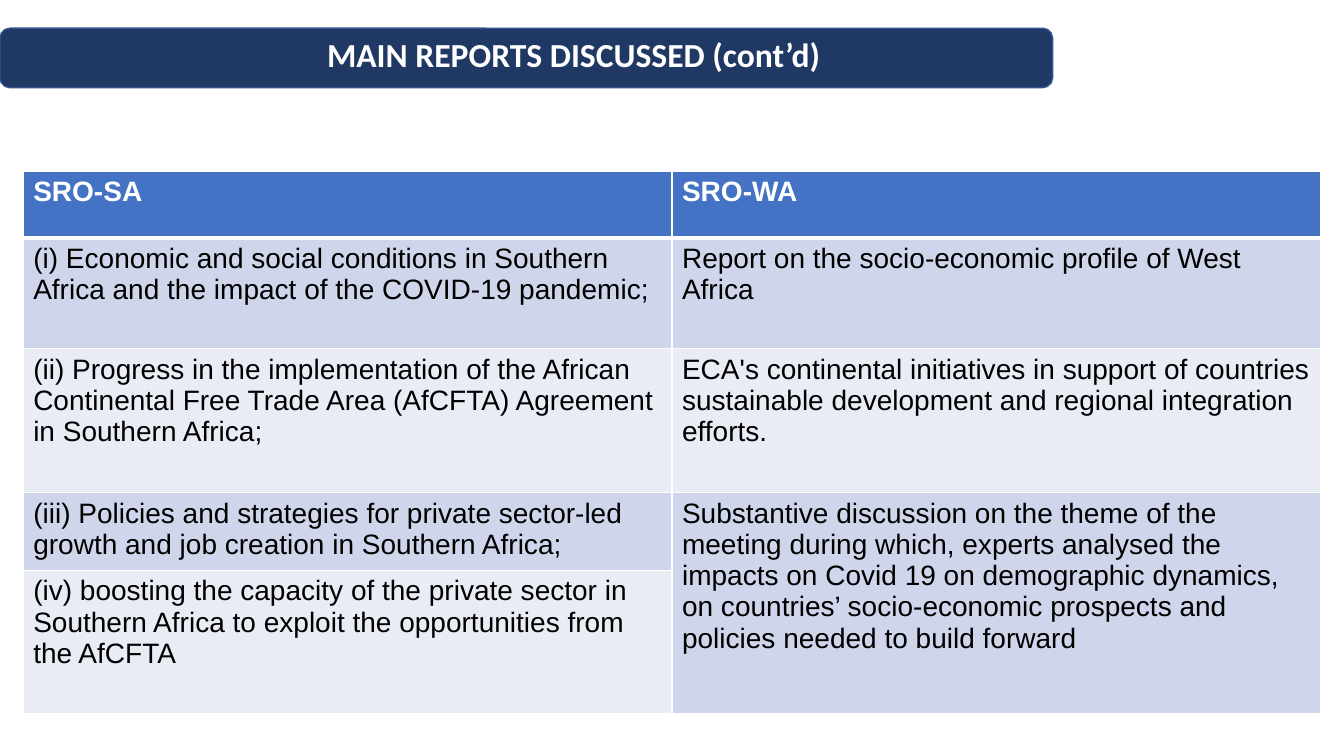
from pptx import Presentation
from pptx.dml.color import RGBColor
from pptx.enum.shapes import MSO_SHAPE
from pptx.enum.text import MSO_ANCHOR, PP_ALIGN
from pptx.oxml.ns import qn
from pptx.util import Inches, Pt
from lxml import etree

ROUNDED = MSO_SHAPE.ROUNDED_RECTANGLE
TOP = MSO_ANCHOR.TOP
LEFT, CENTER = PP_ALIGN.LEFT, PP_ALIGN.CENTER

WHITE = RGBColor(0xFF, 0xFF, 0xFF)
BLACK = RGBColor(0, 0, 0)
NAVY = RGBColor(0x20, 0x38, 0x64)
NAVY_EDGE = RGBColor(0x32, 0x54, 0x91)
HEADER_BLUE = RGBColor(0x44, 0x72, 0xC4)
BAND_DARK = RGBColor(0xCF, 0xD5, 0xEA)
BAND_LIGHT = RGBColor(0xE9, 0xEB, 0xF5)

COLUMN_WIDTH = 6.435
ROW_HEIGHTS = [0.66, 1.1, 1.43, 0.77, 1.42]
REPORTS = [
    ("SRO-SA", "SRO-WA"),
    ("(i) Economic and social conditions in Southern Africa and the impact of "
     "the COVID-19 pandemic;",
     "Report on the socio-economic profile of West Africa"),
    ("(ii) Progress in the implementation of the African Continental Free Trade "
     "Area (AfCFTA) Agreement in Southern Africa;",
     "ECA's continental initiatives in support of countries sustainable "
     "development and regional integration efforts."),
    ("(iii) Policies and strategies for private sector-led growth and job "
     "creation in Southern Africa;",
     "Substantive discussion on the theme of the meeting during which, experts "
     "analysed the impacts on Covid 19 on demographic dynamics, on countries’ "
     "socio-economic prospects and policies needed to build forward"),
    ("(iv) boosting the capacity of the private sector in Southern Africa to "
     "exploit the opportunities from the AfCFTA", None),
]


def write_text(frame, text, size=20, font="Arial", color=BLACK, bold=False,
               align=LEFT, indent=0):
    frame.word_wrap = True
    paragraph = frame.paragraphs[0]
    paragraph.alignment = align
    if indent:
        paragraph._p.get_or_add_pPr().set("marL", str(Inches(indent)))
    run = paragraph.add_run()
    run.text = text
    run.font.size = Pt(size)
    run.font.name = font
    run.font.bold = bold
    run.font.color.rgb = color


def add_title(slide, text):
    banner = slide.shapes.add_shape(
        ROUNDED, Inches(0), Inches(0.28), Inches(10.44), Inches(0.59))
    banner.shadow.inherit = False
    banner.fill.solid()
    banner.fill.fore_color.rgb = NAVY
    banner.line.color.rgb = NAVY_EDGE
    banner.line.width = Pt(1)
    title = slide.shapes.add_textbox(
        Inches(0.96), Inches(0.29), Inches(9.07), Inches(0.5))
    write_text(title.text_frame, text, size=24, font="Calibri", color=WHITE,
               bold=True, align=CENTER, indent=0.39)


def set_borders(cell, bottom=1):
    """White cell edges; call before the fill so the XML order holds."""
    properties = cell._tc.get_or_add_tcPr()
    for side, width in (("L", 1), ("R", 1), ("T", 1), ("B", bottom)):
        edge = etree.SubElement(properties, qn(f"a:ln{side}"), w=str(Pt(width)))
        paint = etree.SubElement(edge, qn("a:solidFill"))
        etree.SubElement(paint, qn("a:srgbClr"), val=str(WHITE))


def add_reports_table(slide):
    table = slide.shapes.add_table(
        len(REPORTS), 2, Inches(0.23), Inches(1.7),
        Inches(2 * COLUMN_WIDTH), Inches(sum(ROW_HEIGHTS))).table
    for column in table.columns:
        column.width = Inches(COLUMN_WIDTH)
    for row, height in zip(table.rows, ROW_HEIGHTS):
        row.height = Inches(height)

    # The last West Africa entry covers two rows
    table.cell(3, 1).merge(table.cell(4, 1))
    for r, entries in enumerate(REPORTS):
        header = r == 0
        band = HEADER_BLUE if header else (BAND_DARK if r % 2 else BAND_LIGHT)
        for c, entry in enumerate(entries):
            cell = table.cell(r, c)
            set_borders(cell, bottom=3 if header else 1)
            cell.fill.solid()
            cell.fill.fore_color.rgb = band
            cell.vertical_anchor = TOP
            if entry:
                write_text(cell.text_frame, entry, bold=header,
                           color=WHITE if header else BLACK)


def main():
    deck = Presentation()
    deck.slide_width = Inches(13.33)
    deck.slide_height = Inches(7.5)
    slide = deck.slides.add_slide(deck.slide_layouts[6])
    add_title(slide, "MAIN REPORTS DISCUSSED (cont’d)")
    add_reports_table(slide)
    deck.save("out.pptx")


if __name__ == "__main__":
    main()
